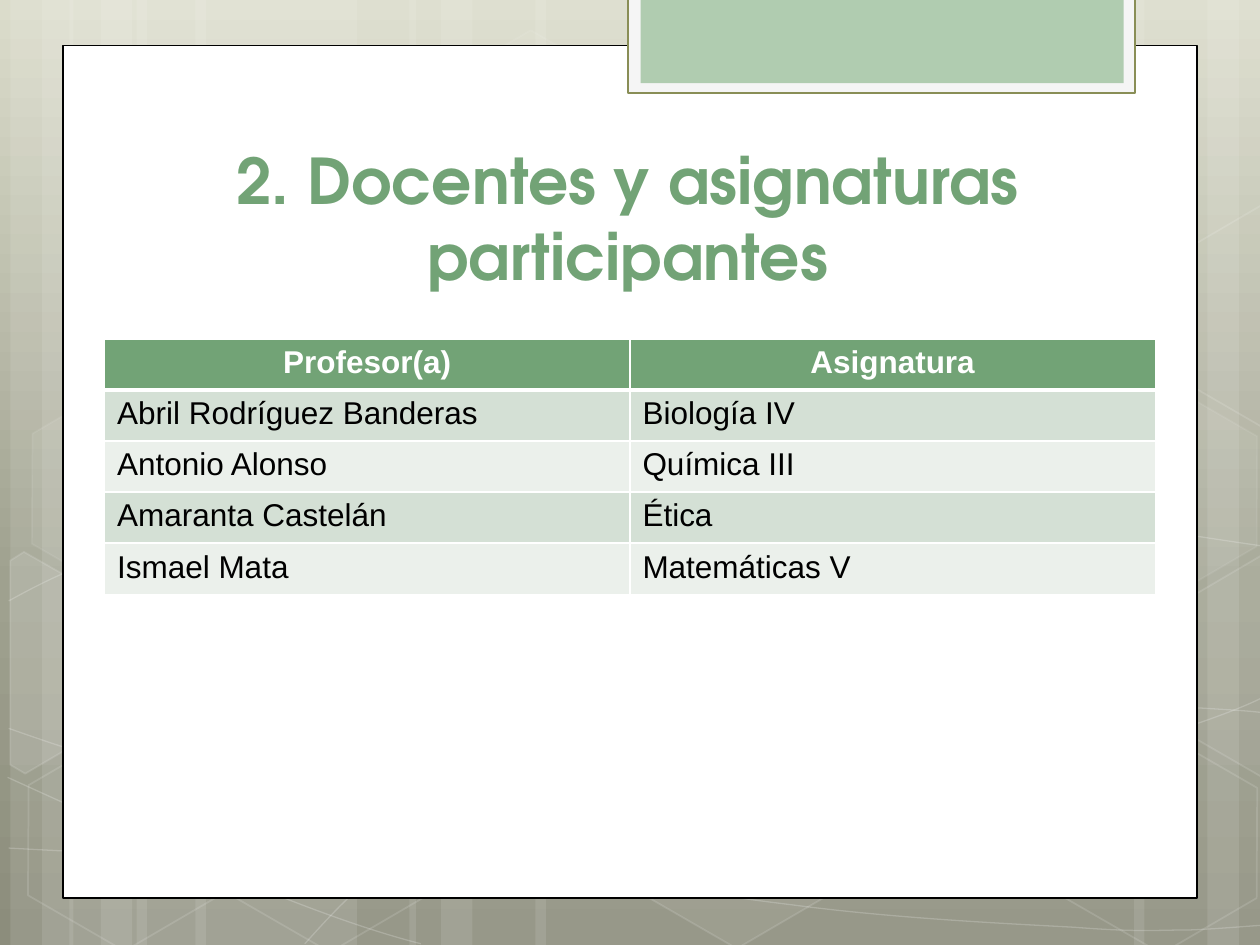
import pptx
import pptx.dml.color
import pptx.enum.shapes
import pptx.enum.text
import pptx.oxml
import pptx.oxml.ns
import pptx.util
import copy

Pt = pptx.util.Pt
qn = pptx.oxml.ns.qn
SHAPES = pptx.enum.shapes.MSO_SHAPE
CENTER = pptx.enum.text.PP_ALIGN.CENTER
WHITE, GREEN = "FFFFFF", "72A376"

TITLE = "2. Docentes y asignaturas participantes"
ROWS = [
    ("Profesor(a)", "Asignatura"),
    ("Abril Rodríguez Banderas", "Biología IV"),
    ("Antonio Alonso", "Química III"),
    ("Amaranta Castelán", "Ética"),
    ("Ismael Mata", "Matemáticas V"),
]
BACKGROUND_STOPS = [(0, "DBDCCB"), (0.62, "9FA18F"), (1, "8C8D7C")]

# left, width
BANDS = [
    (78, 126), (6, 36), (24, 60), (111.6, 126), (39.6, 36), (57.6, 60),
    (528, 126), (690, 36), (648, 60), (306, 222), (234, 36), (252, 60),
]
# start point, then two control points and an end point per segment
CURVES = [
    [(5, 484.6), (44, 486.7), (82.8, 488.9), (136.8, 488.2), (190.8, 487.4), (257.8, 486), (329.8, 478.8),
     (401.8, 471.6), (504, 457.9), (570.2, 444.2), (635.8, 430.6), (703.4, 409), (725, 396.7)],
    [(5, 343.4), (25.9, 331.9), (46.8, 321.1), (87.1, 310.3), (128.2, 299.5), (186.5, 283.7), (249.8, 278.6),
     (313.9, 273.6), (391.7, 272.9), (470.9, 278.6), (550.1, 284.4), (681.8, 306.7), (725, 312.5)],
    [(4.3, 444.2), (91.4, 483.8), (177.8, 523.4), (240.5, 539.3)],
    [(5, 416.2), (27.4, 424.1), (50.4, 432), (92.2, 443.5), (133.9, 454.3), (196.6, 472.3), (257, 484.6),
     (316.8, 496.8), (392.4, 509.8), (452.2, 517), (511.9, 524.9), (576, 527.8), (614.2, 529.9),
     (651.6, 532.8), (661.7, 531.4), (680.4, 531.4), (699.1, 530.6), (712.1, 529.2), (725, 528.5)],
    [(174.2, 539.3), (187.2, 524.9), (200.2, 510.5), (217.4, 497.5), (234.7, 484.6), (259.2, 470.2),
     (279.4, 460.1), (299.5, 450), (311.8, 445.7), (338.4, 438.5), (364.3, 431.3), (412.6, 421.2),
     (437.8, 416.2), (463.7, 411.1), (467.3, 411.1), (489.6, 409.7), (511.9, 407.5), (547.2, 405.4),
     (571.7, 404.6), (596.9, 403.9), (637.9, 404.6), (637.9, 404.6), (637.9, 404.6), (686.2, 404.6),
     (686.2, 404.6), (699.1, 405.4), (711.4, 406.1), (717.8, 406.8), (724.3, 407.5), (722.2, 406.8),
     (724.3, 407.5)],
]
# left, top, fill opacity, line opacity
HEXAGONS = [
    (240.5, 25.9, 4, 8), (357.8, 424.1, 6, 12), (7.9, 425.5, 0, 12), (10.1, 224.6, 7, 8),
    (125.3, 426.2, 0, 12), (542.2, 326.2, 10, 12), (600.5, 427, 0, 12), (600.5, 226.1, 7, 8),
]
# points, fill opacity
CUT_HEXAGONS = [
    ([(5.8, 320.4), (13.7, 315.4), (69.1, 347), (68.4, 410.4), (14.4, 442.1), (5.8, 437)], 10),
    ([(666.7, 349.2), (720.7, 317.5), (726.5, 321.1), (726.5, 441.4), (721.4, 444.2), (666.7, 412.6)], 4),
    ([(666.7, 149), (720.7, 117.4), (727.2, 121), (726.5, 241.2), (721.4, 244.1), (666.7, 212.4)], 0),
]
# left, top, width, height, fill, line colour, line width
PANELS = [
    (36, 26.2, 648, 486.9, WHITE, "000000", 0.75),
    (359, -1.5, 289.6, 54.7, "F5F5F5", "898E56", 1.25),
    (366.1, -1.5, 276, 49, "B0CCB0", None, 0),
]


def color(value):
    return pptx.dml.color.RGBColor.from_string(value)


def paint(fill, value, opacity=100):
    if not value or not opacity:
        fill.background()
        return
    fill.solid()
    fill.fore_color.rgb = color(value)
    if opacity < 100:
        chosen = fill._xPr.find(qn("a:solidFill"))[0]
        chosen.append(chosen.makeelement(qn("a:alpha"), {"val": str(opacity * 1000)}))


def style(shape, fill, fill_opacity=100, line=None, line_width=0, line_opacity=100):
    shape.shadow.inherit = False
    paint(shape.fill, fill, fill_opacity)
    if line:
        shape.line.width = Pt(line_width)
    paint(shape.line.fill, line, line_opacity)


def add_outline(slide, points, close):
    corners = [(Pt(x), Pt(y)) for x, y in points]
    builder = slide.shapes.build_freeform(*corners[0])
    builder.add_line_segments(corners[1:], close=close)
    return builder.convert_to_shape()


def add_curve(slide, points):
    shape = add_outline(slide, points, False)
    outline = next(shape.element.iter(qn("a:path")))
    lines = outline.findall(qn("a:lnTo"))
    for index in range(0, len(lines), 3):
        segment = outline.makeelement(qn("a:cubicBezTo"), {})
        for line in lines[index:index + 3]:
            segment.append(line[0])
            outline.remove(line)
        outline.append(segment)
    return shape


def add_shape(slide, kind, left, top, width, height):
    return slide.shapes.add_shape(kind, Pt(left), Pt(top), Pt(width), Pt(height))


def add_background(slide):
    fill = slide.background.fill
    fill.gradient()
    fill.gradient_angle = 270
    stop_list = next(slide.element.iter(qn("a:gsLst")))
    stop_list.insert(1, copy.deepcopy(stop_list[0]))
    for stop, (position, value) in zip(fill.gradient_stops, BACKGROUND_STOPS):
        stop.position = position
        stop.color.rgb = color(value)


def add_decoration(slide):
    for left, width in BANDS:
        style(add_shape(slide, SHAPES.RECTANGLE, left, 0, width, 540), WHITE, 10)
    for points in CURVES:
        style(add_curve(slide, points), None, 0, WHITE, 0.75, 20)
    for left, top, fill_opacity, line_opacity in HEXAGONS:
        hexagon = add_shape(slide, SHAPES.HEXAGON, left, top, 126, 109.4)
        hexagon.adjustments[0] = 0.285
        hexagon.rotation = 30
        style(hexagon, WHITE, fill_opacity, WHITE, 1, line_opacity)
    for points, fill_opacity in CUT_HEXAGONS:
        style(add_outline(slide, points, True), WHITE, fill_opacity, WHITE, 1, 12)
    for left, top, width, height, fill, line, line_width in PANELS:
        panel = add_shape(slide, SHAPES.RECTANGLE, left, top, width, height)
        style(panel, fill, 100, line, line_width)


def write(paragraph, text, font, size, value, bold):
    paragraph.text = text
    paragraph.font.name = font
    paragraph.font.size = Pt(size)
    paragraph.font.bold = bold
    paragraph.font.color.rgb = color(value)


def add_title(slide):
    frame = slide.shapes.add_textbox(Pt(82.1), Pt(80.9), Pt(553), Pt(90)).text_frame
    frame.word_wrap = True
    frame.vertical_anchor = pptx.enum.text.MSO_ANCHOR.BOTTOM
    write(frame.paragraphs[0], TITLE, "TeX Gyre Adventor", 36, GREEN, True)
    frame.paragraphs[0].alignment = CENTER


def add_borders(cell, widths):
    properties = cell._tc.get_or_add_tcPr()
    for side, width in zip("LRTB", widths):
        properties.append(pptx.oxml.parse_xml(
            f'<a:ln{side} {pptx.oxml.ns.nsdecls("a")} w="{Pt(width)}"><a:solidFill>'
            f'<a:srgbClr val="{WHITE}"/></a:solidFill></a:ln{side}>'))


def add_teachers_table(slide):
    table = slide.shapes.add_table(len(ROWS), 2, Pt(59.7), Pt(193.6), Pt(600.6), Pt(146)).table
    for row_index, row in enumerate(ROWS):
        header = row_index == 0
        fill = GREEN if header else ("EBF0EB", "D4E0D5")[row_index % 2]
        for column_index, text in enumerate(row):
            cell = table.cell(row_index, column_index)
            if header:
                add_borders(cell, (1, 1, 1, 3))
            paint(cell.fill, fill)
            paragraph = cell.text_frame.paragraphs[0]
            write(paragraph, text, "Arial", 18, WHITE if header else "000000", header)
            if header:
                paragraph.alignment = CENTER


def main():
    presentation = pptx.Presentation()
    presentation.slide_width, presentation.slide_height = Pt(720), Pt(540)
    slide = presentation.slides.add_slide(presentation.slide_layouts[6])
    add_background(slide)
    add_decoration(slide)
    add_title(slide)
    add_teachers_table(slide)
    presentation.save("out.pptx")


if __name__ == "__main__":
    main()
